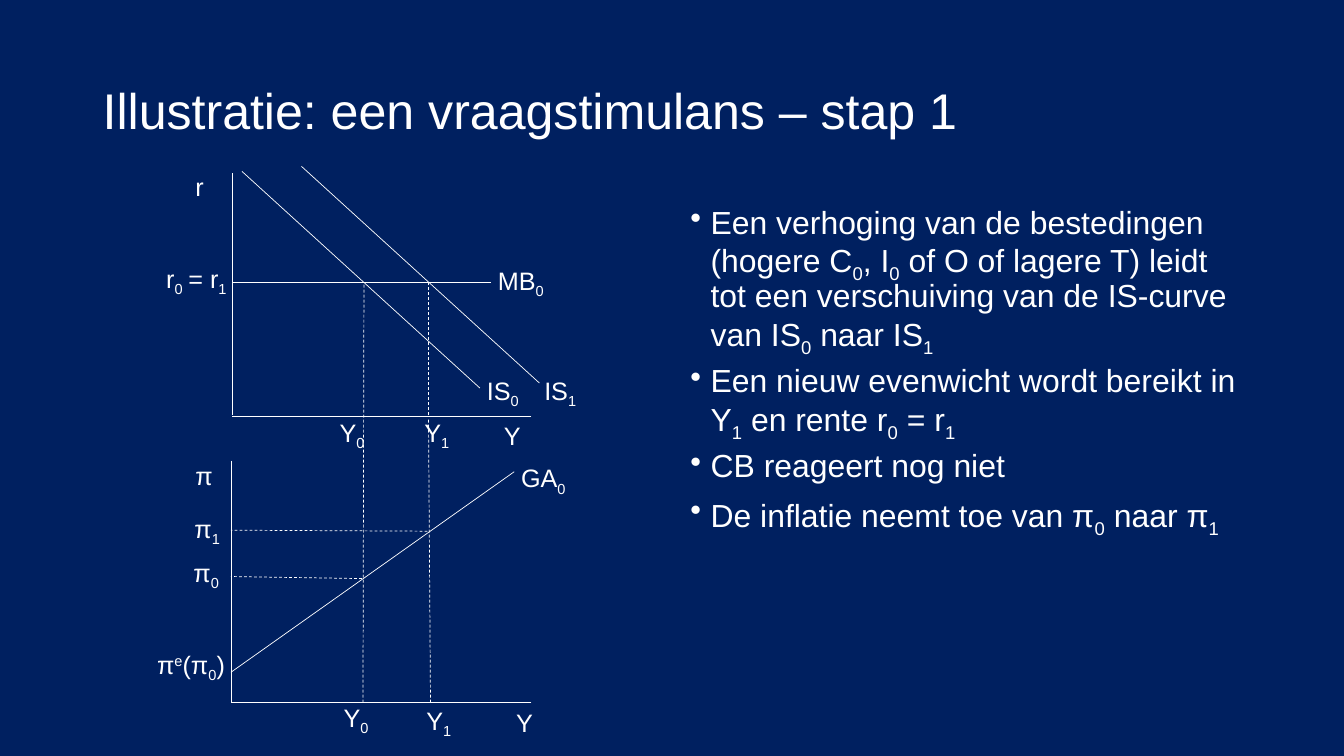
from typing import NamedTuple

import pptx
import pptx.dml.color
import pptx.enum.dml
import pptx.enum.shapes
import pptx.enum.text
import pptx.oxml
import pptx.oxml.ns
import pptx.util

PX = 9144  # EMU per px, 100 px to the inch
FONT = "Arial"
HUES = {"back": "002060", "ink": "FFFFFF"}


class Line(NamedTuple):
    x1: int
    y1: int
    x2: int
    y2: int
    dash: bool = False


class Label(NamedTuple):
    x: int
    y: int
    w: int
    text: str


# In every text, "|" switches to subscript and back; "^" makes it superscript.
TITLE = "Illustratie: een vraagstimulans – stap 1"
POINTS = [
    "Een verhoging van de bestedingen (hogere C|0|, I|0| of O of lagere T) "
    "leidt tot een verschuiving van de IS-curve van IS|0| naar IS|1",
    "Een nieuw evenwicht wordt bereikt in Y|1| en rente r|0| = r|1",
    "CB reageert nog niet",
    "De inflatie neemt toe van π|0| naar π|1",
]
AXES = [
    Line(230, 172, 230, 412),
    Line(527, 413, 230, 413),
    Line(229, 457, 229, 697),
    Line(527, 697, 230, 697),
]
CURVES = [
    Line(476, 385, 240, 170),
    Line(535, 380, 299, 165),
    Line(487, 280, 230, 280),
    Line(229, 667, 510, 468),
]
GUIDES = [
    Line(360, 697, 361, 280, True),
    Line(425, 412, 425, 280, True),
    Line(427, 697, 425, 415, True),
    Line(359, 574, 229, 572, True),
    Line(424, 527, 229, 526, True),
]
LABELS = [
    Label(184, 165, 29, "r"),
    Label(155, 256, 38, "r|0"),
    Label(177, 256, 60, "= r|1"),
    Label(484, 258, 67, "MB|0"),
    Label(473, 367, 53, "IS|0"),
    Label(530, 367, 53, "IS|1"),
    Label(327, 409, 46, "Y|0"),
    Label(411, 409, 46, "Y|1"),
    Label(490, 412, 37, "Y"),
    Label(184, 452, 38, "π"),
    Label(183, 504, 47, "π|1"),
    Label(182, 548, 47, "π|0"),
    Label(146, 639, 90, "π|^e|(π|0|)"),
    Label(507, 454, 66, "GA|0"),
    Label(331, 692, 46, "Y|0"),
    Label(413, 695, 46, "Y|1"),
    Label(502, 697, 37, "Y"),
]


def hue(name: str) -> pptx.dml.color.RGBColor:
    return pptx.dml.color.RGBColor.from_string(HUES[name])


def add_runs(para, text: str, size: float) -> None:
    for i, piece in enumerate(text.split("|")):
        if not piece:
            continue
        run = para.add_run()
        run.text = piece.lstrip("^")
        run.font.name = FONT
        run.font.size = pptx.util.Pt(size)
        run.font.color.rgb = hue("ink")
        if i % 2:
            base = "30000" if piece.startswith("^") else "-25000"
            run._r.get_or_add_rPr().set("baseline", base)


def add_frame(slide, x: int, y: int, w: int, h: int, wrap: bool = True):
    box = slide.shapes.add_textbox(x * PX, y * PX, w * PX, h * PX)
    box.text_frame.word_wrap = wrap
    return box.text_frame


def add_title(slide) -> None:
    frame = add_frame(slide, 92, 40, 1150, 145)
    frame.vertical_anchor = pptx.enum.text.MSO_ANCHOR.MIDDLE
    para = frame.paragraphs[0]
    para.line_spacing = 0.9
    add_runs(para, TITLE, 35.8)


def add_points(slide) -> None:
    frame = add_frame(slide, 675, 200, 567, 476)
    for i, text in enumerate(POINTS):
        para = frame.add_paragraph() if i else frame.paragraphs[0]
        para.line_spacing = 0.9
        para.space_before = pptx.util.Pt(8.1)
        props = para._p.get_or_add_pPr()
        props.set("marL", str(20 * PX))
        props.set("indent", str(-20 * PX))
        mark = pptx.oxml.parse_xml(
            f'<a:buChar {pptx.oxml.ns.nsdecls("a")} char="•"/>')
        props.append(mark)
        add_runs(para, text, 22.8)


def add_line(slide, line: Line) -> None:
    kind = pptx.enum.shapes.MSO_CONNECTOR.STRAIGHT
    shape = slide.shapes.add_connector(
        kind, line.x1 * PX, line.y1 * PX, line.x2 * PX, line.y2 * PX)
    shape.line.color.rgb = hue("ink")
    shape.line.width = pptx.util.Pt(0.5)
    if line.dash:
        shape.line.dash_style = pptx.enum.dml.MSO_LINE.DASH
    flat = pptx.oxml.parse_xml(
        f'<a:effectLst {pptx.oxml.ns.nsdecls("a")}/>')
    shape._element.spPr.append(flat)


def add_label(slide, label: Label) -> None:
    frame = add_frame(slide, label.x, label.y, label.w, 40, wrap=False)
    frame.auto_size = pptx.enum.text.MSO_AUTO_SIZE.SHAPE_TO_FIT_TEXT
    add_runs(frame.paragraphs[0], label.text, 18)


def main() -> None:
    deck = pptx.Presentation()
    deck.slide_width = 1333 * PX
    deck.slide_height = 750 * PX
    slide = deck.slides.add_slide(deck.slide_layouts[6])
    slide.background.fill.solid()
    slide.background.fill.fore_color.rgb = hue("back")
    add_title(slide)
    add_points(slide)
    for line in AXES + CURVES + GUIDES:
        add_line(slide, line)
    for label in LABELS:
        add_label(slide, label)
    deck.save("out.pptx")


if __name__ == "__main__":
    main()
